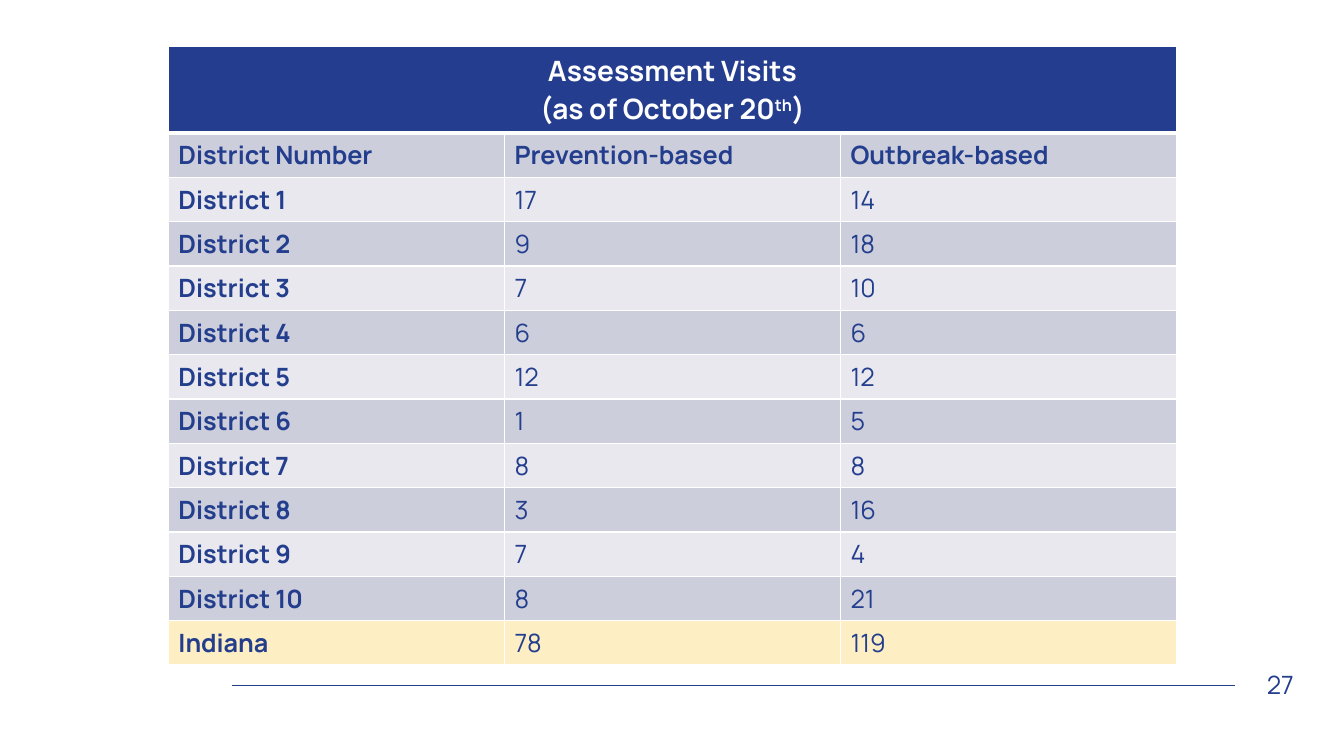
from dataclasses import dataclass

from lxml import etree
from pptx import Presentation
from pptx.dml.color import RGBColor
from pptx.enum.shapes import MSO_CONNECTOR
from pptx.enum.text import MSO_ANCHOR, PP_ALIGN
from pptx.oxml.ns import qn
from pptx.util import Inches, Pt

STRAIGHT = MSO_CONNECTOR.STRAIGHT
MIDDLE = MSO_ANCHOR.MIDDLE
CENTER, LEFT, RIGHT = PP_ALIGN.CENTER, PP_ALIGN.LEFT, PP_ALIGN.RIGHT

TITLE = "Assessment Visits\n(as of October 20"
ORDINAL, CLOSE = "th", ")"
HEADS = ("District Number", "Prevention-based", "Outbreak-based")
VISITS = [(17, 14), (9, 18), (7, 10), (6, 6), (12, 12),
          (1, 5), (8, 8), (3, 16), (7, 4), (8, 21)]
TOTAL = ("Indiana", 78, 119)
PAGE = "27"


@dataclass(frozen=True)
class Theme:
    font: str = "Manrope"
    ink: str = "243E8E"
    head: str = "243D8E"
    dark: str = "CDCEDB"
    light: str = "E8E8EE"
    total: str = "FDEEC3"
    white: str = "FFFFFF"
    title: int = 20
    body: int = 18


THEME = Theme()
LEFT_X, TOP_Y, WIDTH = 1.67, 0.46, 10
HEAD_H, ROW_H = 0.86, 0.44
RULE_X, RULE_Y, RULE_END = 2.3, 6.8, 12.25


def style(frame, size, color, bold=False, align=LEFT):
    for para in frame.paragraphs:
        para.alignment = align
        for run in para.runs:
            font = run.font
            font.name, font.size, font.bold = THEME.font, Pt(size), bold
            font.color.rgb = RGBColor.from_string(color)


def edge(cell, top=1, bottom=1):
    """Give the cell white borders, with widths in points."""
    props = cell._tc.get_or_add_tcPr()
    for tag, width in (("lnL", 1), ("lnR", 1), ("lnT", top), ("lnB", bottom)):
        line = etree.SubElement(props, qn(f"a:{tag}"), w=str(Pt(width)))
        fill = etree.SubElement(line, qn("a:solidFill"))
        etree.SubElement(fill, qn("a:srgbClr"), val=THEME.white)


def paint(cell, color):
    cell.fill.solid()
    cell.fill.fore_color.rgb = RGBColor.from_string(color)


def add_visits(slide):
    rows = [HEADS]
    rows += [(f"District {n}", *pair) for n, pair in enumerate(VISITS, 1)]
    rows.append(TOTAL)
    height = HEAD_H + ROW_H * len(rows)
    table = slide.shapes.add_table(
        len(rows) + 1, len(HEADS), Inches(LEFT_X), Inches(TOP_Y),
        Inches(WIDTH), Inches(height)).table
    for col in table.columns:
        col.width = Inches(WIDTH / len(HEADS))
    for r, row in enumerate(table.rows):
        row.height = Inches(ROW_H if r else HEAD_H)

    for cell in table.rows[0].cells:
        edge(cell, bottom=3)
        paint(cell, THEME.head)
    banner = table.cell(0, 0)
    banner.merge(table.cell(0, len(HEADS) - 1))
    banner.text_frame.text = TITLE
    date = banner.text_frame.paragraphs[-1]
    raised = date.add_run()
    raised.text = ORDINAL
    raised._r.get_or_add_rPr().set("baseline", "30000")
    date.add_run().text = CLOSE
    style(banner.text_frame, THEME.title, THEME.white, True, CENTER)

    for r, values in enumerate(rows, 1):
        band = THEME.dark if r % 2 else THEME.light
        if r == len(rows):
            band = THEME.total
        for c, value in enumerate(values):
            cell = table.cell(r, c)
            cell.text_frame.text = str(value)
            style(cell.text_frame, THEME.body, THEME.ink, r == 1 or c == 0)
            edge(cell, top=3 if r == 1 else 1)
            paint(cell, band)


def add_footer(slide):
    rule = slide.shapes.add_connector(
        STRAIGHT, Inches(RULE_X), Inches(RULE_Y),
        Inches(RULE_END), Inches(RULE_Y))
    rule.line.color.rgb = RGBColor.from_string(THEME.ink)
    rule.line.width = Pt(1)
    etree.SubElement(rule._element.spPr, qn("a:effectLst"))
    box = slide.shapes.add_textbox(
        Inches(RULE_END), Inches(RULE_Y - 0.21), Inches(0.68), Inches(0.4))
    frame = box.text_frame
    frame.word_wrap = True
    frame.vertical_anchor = MIDDLE
    frame.text = PAGE
    style(frame, THEME.body, THEME.ink, align=RIGHT)


def main():
    deck = Presentation()
    deck.slide_width, deck.slide_height = Inches(13.33), Inches(7.5)
    slide = deck.slides.add_slide(deck.slide_layouts[6])
    add_footer(slide)
    add_visits(slide)
    deck.save("out.pptx")


if __name__ == "__main__":
    main()
